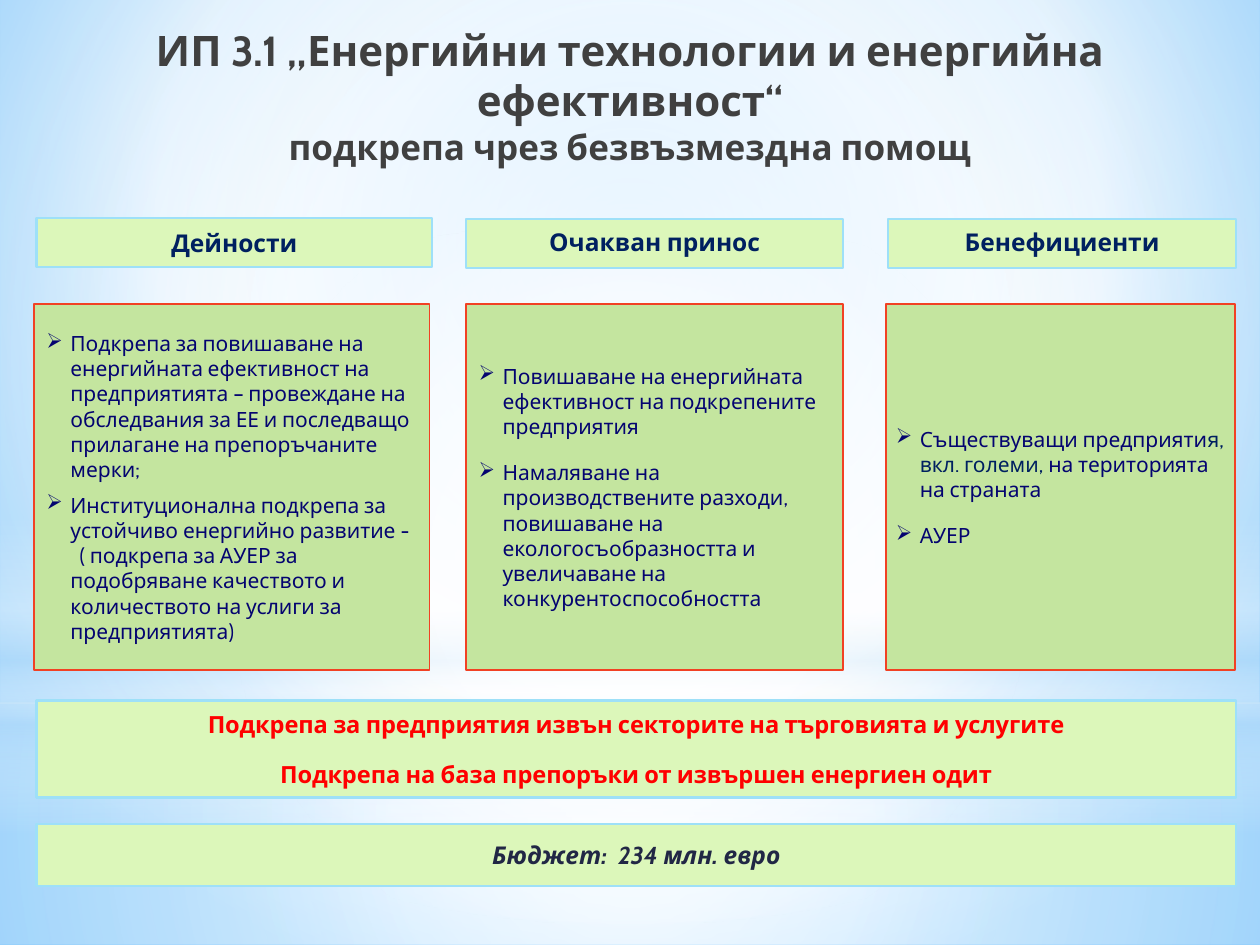
from lxml.etree import SubElement
from pptx import Presentation
from pptx.dml.color import RGBColor
from pptx.enum.shapes import MSO_SHAPE
from pptx.enum.text import MSO_ANCHOR, MSO_AUTO_SIZE, PP_ALIGN
from pptx.oxml.ns import qn
from pptx.util import Inches, Pt

FONT = "Cabin"
NAVY, INK, BLUE = "002060", "212745", "040470"
HEADER = {"fill": "DCF7BA", "line": "9EE0F8", "width": 1.25}
BODY = {"fill": "C4E59F", "line": "F14124", "width": 1}
CENTER = {"alignment": PP_ALIGN.CENTER}
SPACED = {"space_before": Pt(6), "space_after": Pt(6)}


def rgb(value):
    return RGBColor.from_string(value)


def set_gradient(owner, stops, centre=None):
    """Swap the owner's solid fill for a gradient: circular, or top to bottom."""
    owner.fill.solid()
    owner.fill.fore_color.rgb = rgb("FFFFFF")
    root = owner.element if hasattr(owner, "element") else owner._cSld
    swap_fill(root, stops, centre)


def swap_fill(root, stops, centre):
    solid = next(root.iter(qn("a:solidFill")))
    grad = solid.makeelement(qn("a:gradFill"), {"rotWithShape": "1"})
    stop_list = SubElement(grad, qn("a:gsLst"))
    for position, color, alpha in stops:
        gs = SubElement(stop_list, qn("a:gs"), pos=str(position * 1000))
        clr = SubElement(gs, qn("a:srgbClr"), val=color)
        if alpha < 100:
            SubElement(clr, qn("a:alpha"), val=str(alpha * 1000))
    if centre:
        path = SubElement(grad, qn("a:path"))
        path.set("path", "circle")
        sides = {side: str(v * 1000) for side, v in zip("ltrb", centre)}
        SubElement(path, qn("a:fillToRect"), sides)
    else:
        SubElement(grad, qn("a:lin"), ang="5400000", scaled="0")
    solid.getparent().replace(solid, grad)


def add_backdrop(s):
    """Sky gradient with four translucent layers of light."""
    s.background.fill.solid()
    s.background.fill.fore_color.rgb = rgb("FFFFFF")
    swap_fill(s.element, [(0, "9ED5FF", 100), (60, "FFFFFF", 100),
                          (100, "5BB9FF", 100)], (20, 10, 20, 60))
    middle = (50, 50, 50, 50)
    white, sky = "FFFFFF", "B4DCFA"
    layers = [
        (MSO_SHAPE.RECTANGLE, 5.58, 1.92,
         [(0, white, 91), (37, white, 76), (100, sky, 79)], middle),
        (MSO_SHAPE.RECTANGLE, 0, 5.58,
         [(0, white, 89), (48, white, 62), (100, sky, 79)], middle),
        (MSO_SHAPE.RECTANGLE, 4.12, 2.5,
         [(0, white, 0), (29, white, 30), (45, sky, 40),
          (55, white, 26), (65, sky, 60), (100, white, 0)], None),
        (MSO_SHAPE.OVAL, 1.75, 5.58,
         [(0, white, 100), (56, white, 0)], middle),
    ]
    for kind, top, height, stops, centre in layers:
        sp = s.shapes.add_shape(kind, 0, Inches(top), Inches(10), Inches(height))
        sp.shadow.inherit = False
        sp.line.fill.background()
        set_gradient(sp, stops, centre)


def add_run(p, text, size, color, **style):
    r = p.add_run()
    r.text = text
    r.font.color.rgb = rgb(color)
    for name, value in {"name": FONT, "size": Pt(size), **style}.items():
        setattr(r.font, name, value)


def add_title(s):
    sp = s.shapes.title
    sp.element.getparent().append(sp.element)  # bring in front of the backdrop
    place = {"left": 0, "top": 0.21, "width": 10, "height": 1.1}
    for name, value in place.items():
        setattr(sp, name, Inches(value))
    tf = sp.text_frame
    tf.auto_size = MSO_AUTO_SIZE.NONE
    tf.vertical_anchor = MSO_ANCHOR.MIDDLE
    p = tf.paragraphs[0]
    p.alignment = PP_ALIGN.CENTER
    add_run(p, "ИП 3.1 „Енергийни технологии и енергийна ефективност“", 24,
            "404040", bold=True)
    p.add_line_break()
    add_run(p, "подкрепа чрез безвъзмездна помощ", 20, "404040", bold=True)


def add_box(s, box, look, insets=(0.1, 0.1)):
    sp = s.shapes.add_shape(MSO_SHAPE.RECTANGLE, *map(Inches, box))
    sp.shadow.inherit = False
    sp.fill.solid()
    sp.fill.fore_color.rgb = rgb(look["fill"])
    sp.line.color.rgb = rgb(look["line"])
    sp.line.width = Pt(look["width"])
    tf = sp.text_frame
    tf.word_wrap = True
    tf.vertical_anchor = MSO_ANCHOR.MIDDLE
    tf.margin_left, tf.margin_right = map(Inches, insets)
    return tf


def add_paragraph(tf, index, layout):
    p = tf.add_paragraph() if index else tf.paragraphs[0]
    for name, value in layout.items():
        setattr(p, name, value)
    return p


def add_banner(s, box, lines, layout, size, color, **style):
    tf = add_box(s, box, HEADER)
    for i, line in enumerate(lines):
        p = add_paragraph(tf, i, {**CENTER, **layout})
        add_run(p, line, size, color, bold=True, **style)


def add_bullets(s, box, items, layout, insets):
    """Each item is a list of (text, colour) runs."""
    tf = add_box(s, box, BODY, insets)
    for i, runs in enumerate(items):
        p = add_paragraph(tf, i, {"alignment": PP_ALIGN.LEFT, **layout})
        pPr = p._p.get_or_add_pPr()
        indent = Inches(0.19)
        pPr.set("marL", str(indent))
        pPr.set("indent", str(-indent))
        SubElement(pPr, qn("a:buChar"), char="➢")
        for text, color in runs:
            add_run(p, text, 12, color)


def main():
    prs = Presentation()
    prs.slide_width, prs.slide_height = Inches(10), Inches(7.5)
    s = prs.slides.add_slide(prs.slide_layouts[5])
    add_backdrop(s)
    add_title(s)

    # Three columns: header banner above a bulleted box
    tight = {"line_spacing": 0.9}
    columns = [
        ("Дейности", (0.29, 1.73, 3.14, 0.39), {}, (0.27, 2.41, 3.14, 2.91),
         {"space_after": Pt(6)}, (0.1, 0.1),
         [[("Подкрепа за повишаване на енергийната ефективност на "
            "предприятията – провеждане на обследвания за ЕЕ и последващо "
            "прилагане на препоръчаните мерки;", BLUE)],
          [("Институционална подкрепа за устойчиво енергийно развитие -    "
            "( подкрепа за АУЕР за подобряване качеството и количеството на "
            "услиги за предприятията)", BLUE)]]),
        ("Очакван принос", (3.7, 1.74, 2.99, 0.39), tight,
         (3.7, 2.41, 2.99, 2.91), SPACED, (0.1, 0.04),
         [[("Повишаване на енергийната ефективност на подкрепените "
            "предприятия", BLUE)],
          [("Намаляване на производствените разходи, повишаване на "
            "екологосъобразността и увеличаване на "
            "конкурентоспособността", BLUE)]]),
        ("Бенефициенти", (7.05, 1.74, 2.76, 0.39), tight,
         (7.03, 2.41, 2.77, 2.91), SPACED, (0.08, 0),
         [[("Съществуващи предприяти", BLUE), ("я, вкл. големи, ", NAVY),
           ("на територията на страната", BLUE)],
          [("АУЕР", BLUE)]]),
    ]
    for header, header_box, spacing, box, layout, insets, items in columns:
        add_banner(s, header_box, [header], spacing, 14, NAVY)
        add_bullets(s, box, items, layout, insets)

    # Full-width conditions and budget
    add_banner(s, (0.29, 5.56, 9.52, 0.77),
               ["Подкрепа за предприятия извън секторите на търговията и услугите",
                "Подкрепа на база препоръки от извършен енергиен одит"],
               SPACED, 13.5, "FF0000")
    add_banner(s, (0.29, 6.54, 9.52, 0.49), ["Бюджет:  234 млн. евро"],
               {"space_before": Pt(6)}, 14, INK, italic=True)
    prs.save("out.pptx")


if __name__ == "__main__":
    main()
